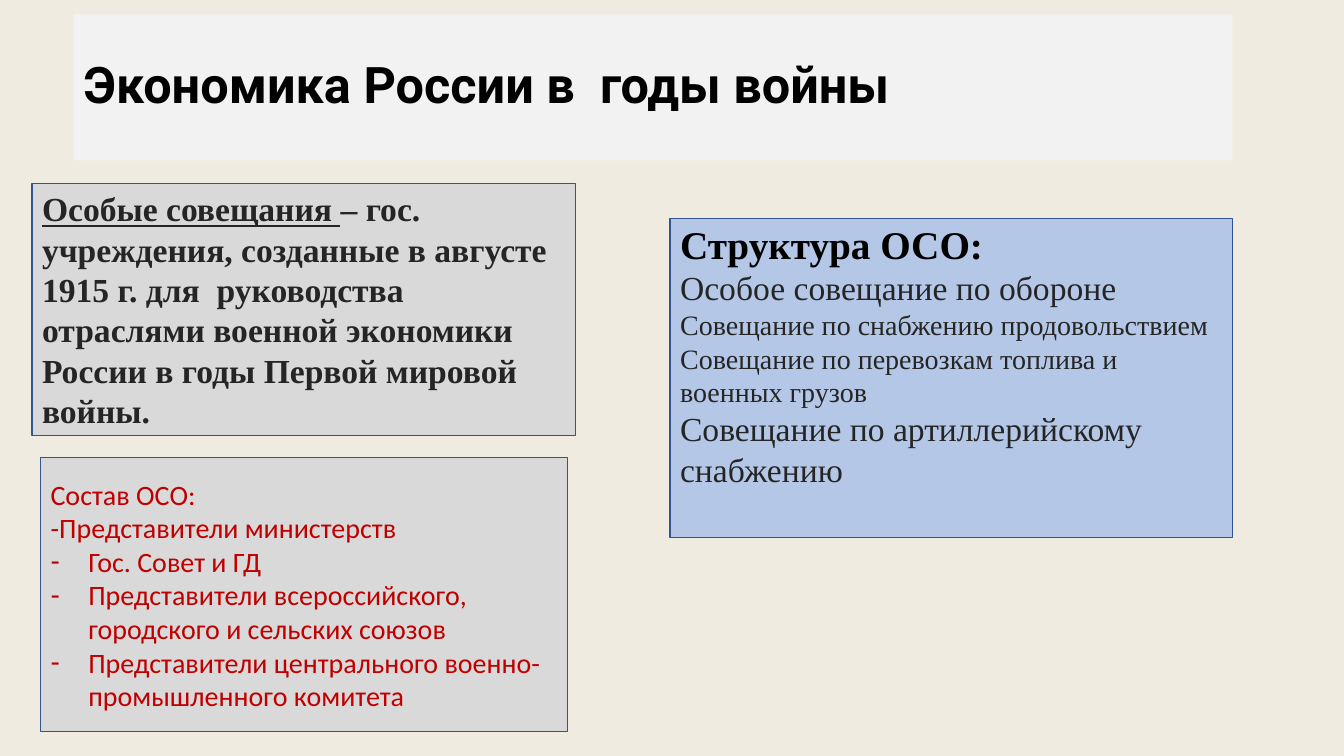
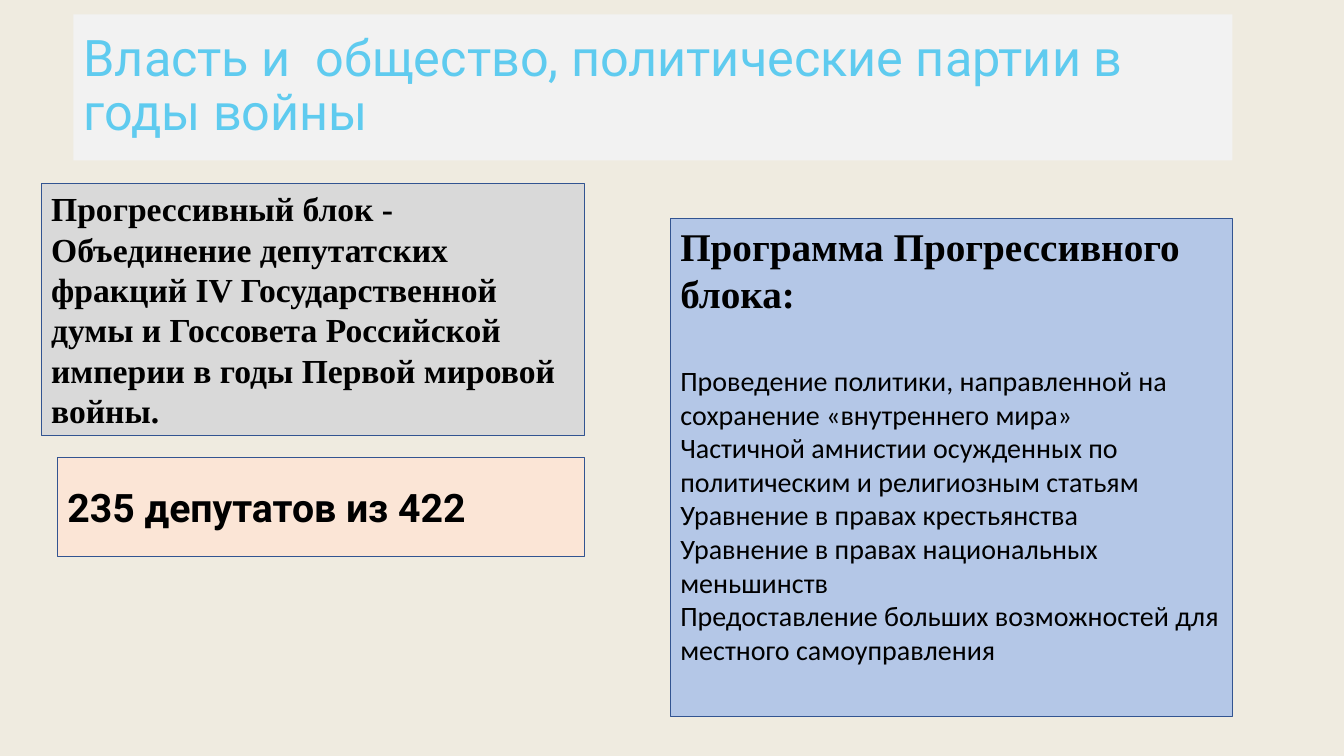
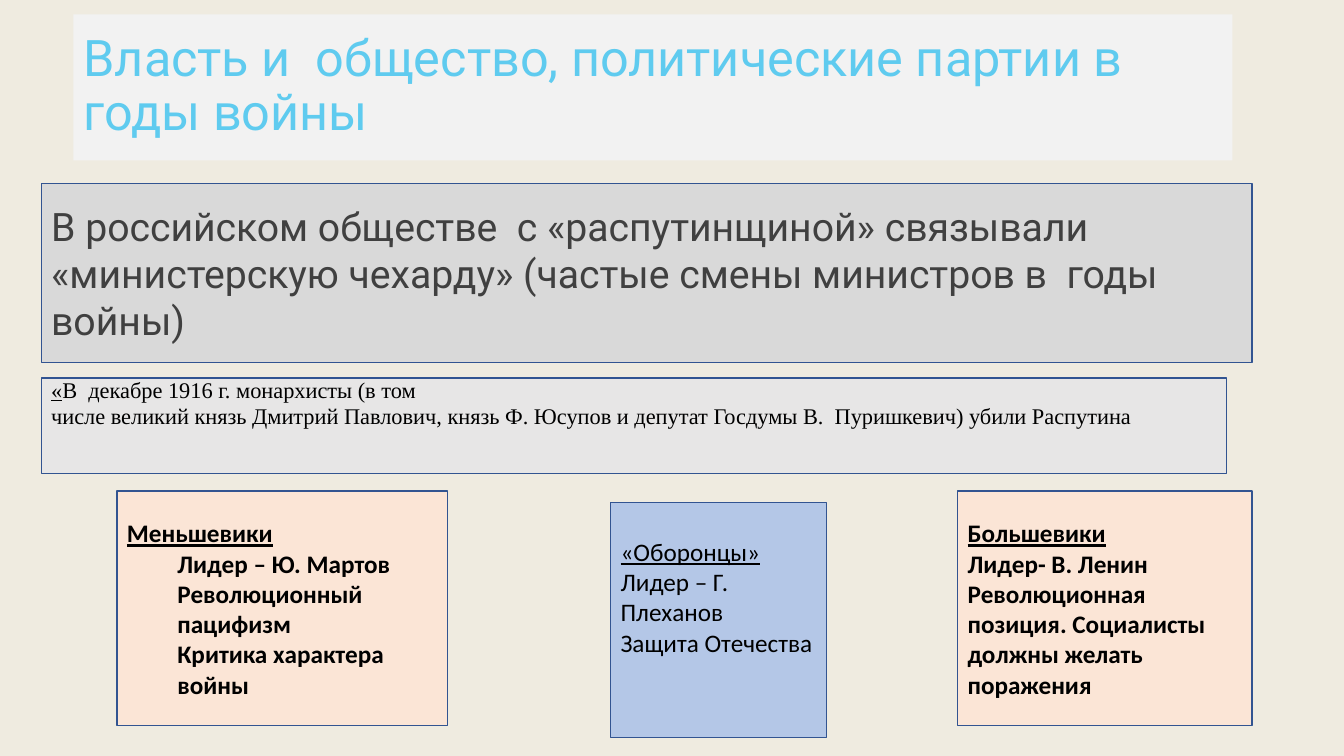
from dataclasses import dataclass

import pptx
import pptx.dml.color
import pptx.enum.shapes
import pptx.enum.text
import pptx.oxml.ns
import pptx.util
from lxml import etree
from pptx.util import Cm, Pt

SERIF, SANS, DISPLAY = "Times New Roman", "Calibri", "Roboto"
BLACK, CHARCOAL, GRAPHITE = "000000", "252525", "404040"
RED, SKY = "C00000", "5FCBEF"
CREAM, PALE, GREY, SILVER = "EFEBE0", "F2F2F2", "D9D9D9", "E7E6E6"
BLUE, PEACH, OUTLINE = "B4C7E7", "FBE5D6", "325491"
SOCIETY = "Власть и  общество, политические партии в  годы войны"


def rgb(value):
    return pptx.dml.color.RGBColor.from_string(value)


@dataclass
class Line:
    """One paragraph; lead is its underlined beginning, before is in points."""
    text: str
    size: float
    font: str = SANS
    color: str = BLACK
    bold: bool = False
    lead: str = ""
    before: float = 0
    indent: float = 0
    bullet: str = ""
    spacing: float = 1.0


class Deck:
    MARGIN = Cm(0.13)
    LEFT, TOP = 1.04, 4.62
    RIGHT_COLUMN = (16.89, 5.51, 14.17)
    ROOMY = Pt(33.6)

    def __init__(self):
        self.presentation = pptx.Presentation()
        self.presentation.slide_width = Cm(33.87)
        self.presentation.slide_height = Cm(19.05)
        background = self.presentation.slide_master.background.fill
        background.solid()
        background.fore_color.rgb = rgb(CREAM)
        self.slide = None

    def new_slide(self, title, color=SKY, bold=False):
        layout = self.presentation.slide_layouts[1]
        self.slide = self.presentation.slides.add_slide(layout)
        heading = self.slide.shapes.title
        self.place(heading, (1.85, 0.36, 29.21, 3.68), PALE)
        self.set_lines(heading, [Line(title, 36, DISPLAY, color, bold, spacing=0.9)])

    def panel(self, area, fill, lines, extra_bottom=0):
        rectangle = pptx.enum.shapes.MSO_SHAPE.RECTANGLE
        panel = self.slide.shapes.add_shape(rectangle, 0, 0, 0, 0)
        panel.shadow.inherit = False
        self.outlined(panel, area, fill, lines, extra_bottom)

    def list_panel(self, area, fill, lines, extra_bottom=0):
        """Like panel, but in the slide's body placeholder."""
        body = self.slide.placeholders[1]
        self.outlined(body, area, fill, lines, extra_bottom)

    def outlined(self, shape, area, fill, lines, extra_bottom):
        self.place(shape, area, fill)
        shape.line.color.rgb = rgb(OUTLINE)
        shape.line.width = Pt(1)
        self.set_lines(shape, lines, extra_bottom)

    def place(self, shape, area, fill):
        shape.left, shape.top, shape.width, shape.height = map(Cm, area)
        shape.fill.solid()
        shape.fill.fore_color.rgb = rgb(fill)

    def set_lines(self, shape, lines, extra_bottom=0):
        frame = shape.text_frame
        frame.word_wrap = True
        frame.auto_size = pptx.enum.text.MSO_AUTO_SIZE.NONE
        frame.vertical_anchor = pptx.enum.text.MSO_ANCHOR.MIDDLE
        frame.margin_top = self.MARGIN
        frame.margin_bottom = self.MARGIN + extra_bottom
        for number, line in enumerate(lines):
            paragraph = frame.add_paragraph() if number else frame.paragraphs[0]
            self.style_paragraph(paragraph, line)
            if line.lead:
                lead = paragraph.add_run()
                lead.text = line.lead
                lead.font.underline = True
            if line.text:
                paragraph.add_run().text = line.text

    def style_paragraph(self, paragraph, line):
        paragraph.alignment = pptx.enum.text.PP_ALIGN.LEFT
        paragraph.line_spacing = line.spacing
        paragraph.space_before = Pt(line.before)
        properties = paragraph._p.get_or_add_pPr()
        indent = Cm(line.indent)
        properties.set("marL", str(indent))
        properties.set("indent", str(-indent if line.bullet else 0))
        tag = "a:buChar" if line.bullet else "a:buNone"
        mark = etree.SubElement(properties, pptx.oxml.ns.qn(tag))
        if line.bullet:
            mark.set("char", line.bullet)
        font = paragraph.font
        font.name, font.size, font.bold = line.font, Pt(line.size), line.bold
        font.color.rgb = rgb(line.color)


def economy(deck):
    deck.new_slide("Экономика России в  годы войны", BLACK, True)
    deck.panel((0.81, deck.TOP, 13.69, 6.35), GREY, [
        Line("– гос. учреждения, созданные в августе 1915 г. для  руководства "
             "отраслями военной экономики России в годы Первой мировой войны.",
             24, SERIF, CHARCOAL, True, lead="Особые совещания "),
    ])
    members = ["Гос. Совет и ГД",
               "Представители всероссийского, городского и сельских союзов",
               "Представители центрального военно-промышленного комитета"]
    deck.list_panel((1.02, 11.53, 13.28, 6.91), GREY, [
        Line("Состав ОСО:", 20, color=RED),
        Line("-Представители министерств", 20, color=RED),
        *(Line(member, 20, color=RED, indent=0.95, bullet="-")
          for member in members),
    ])
    councils = [("Особое совещание по обороне", 24),
                ("Совещание по снабжению продовольствием", 20),
                ("Совещание по перевозкам топлива и военных грузов", 20),
                ("Совещание по артиллерийскому снабжению", 24)]
    deck.panel((*deck.RIGHT_COLUMN, 8.03), BLUE, [
        Line("Структура ОСО:", 28, SERIF, bold=True),
        *(Line(council, size, SERIF, CHARCOAL) for council, size in councils),
    ], deck.ROOMY)


def progressive_bloc(deck):
    deck.new_slide(SOCIETY)
    deck.panel((deck.LEFT, deck.TOP, 13.69, 6.35), GREY, [
        Line("Прогрессивный блок - Объединение депутатских фракций IV "
             "Государственной думы и Госсовета Российской империи в годы "
             "Первой мировой войны.", 24, SERIF, bold=True),
    ])
    deck.panel((1.45, 11.53, 13.28, 2.49), PEACH,
               [Line("235 депутатов из 422", 28, DISPLAY, bold=True)])
    demands = ["Частичной амнистии осужденных по политическим и религиозным статьям",
               "Уравнение в правах крестьянства",
               "Уравнение в правах национальных меньшинств",
               "Предоставление больших возможностей для местного самоуправления"]
    deck.list_panel((*deck.RIGHT_COLUMN, 12.55), BLUE, [
        Line("Программа Прогрессивного блока:", 28, SERIF, bold=True),
        Line("Проведение политики, направленной на сохранение «внутреннего мира»",
             20, before=33.6),
        *(Line(demand, 20) for demand in demands),
    ], deck.ROOMY)


def parties(deck):
    deck.new_slide(SOCIETY)
    deck.panel((deck.LEFT, deck.TOP, 30.51, 4.52), GREY, [
        Line("В российском обществе  с «распутинщиной» связывали «министерскую "
             "чехарду» (частые смены министров в  годы войны)",
             28, DISPLAY, GRAPHITE),
    ])
    deck.panel((2.95, 12.37, 8.33, 5.92), PEACH, [
        Line("", 18, bold=True, lead="Меньшевики"),
        *(Line(text, 18, bold=True, indent=1.27) for text in (
            "Лидер – Ю. Мартов", "Революционный пацифизм",
            "Критика характера войны")),
    ])
    deck.panel((15.39, 12.67, 5.44, 5.92), BLUE, [
        Line("", 18, lead="«Оборонцы»"),
        Line("Лидер – Г. Плеханов", 18),
        Line("Защита Отечества", 18),
    ], deck.ROOMY)
    deck.list_panel((24.13, 12.37, 7.42, 5.92), PEACH, [
        Line("", 18, bold=True, lead="Большевики"),
        Line("Лидер- В. Ленин", 18, bold=True),
        Line("Революционная позиция. Социалисты должны желать поражения",
             18, bold=True),
    ])
    deck.panel((deck.LEFT, 9.53, 29.87, 2.41), SILVER, [
        Line("В  декабре 1916 г. монархисты (в том", 16, SERIF, lead="«"),
        Line("числе великий князь Дмитрий Павлович, князь Ф. Юсупов и депутат "
             "Госдумы В.  Пуришкевич) убили Распутина", 16, SERIF),
    ], deck.ROOMY)


def main():
    deck = Deck()
    for build in (economy, progressive_bloc, parties):
        build(deck)
    deck.presentation.save("out.pptx")


if __name__ == "__main__":
    main()
